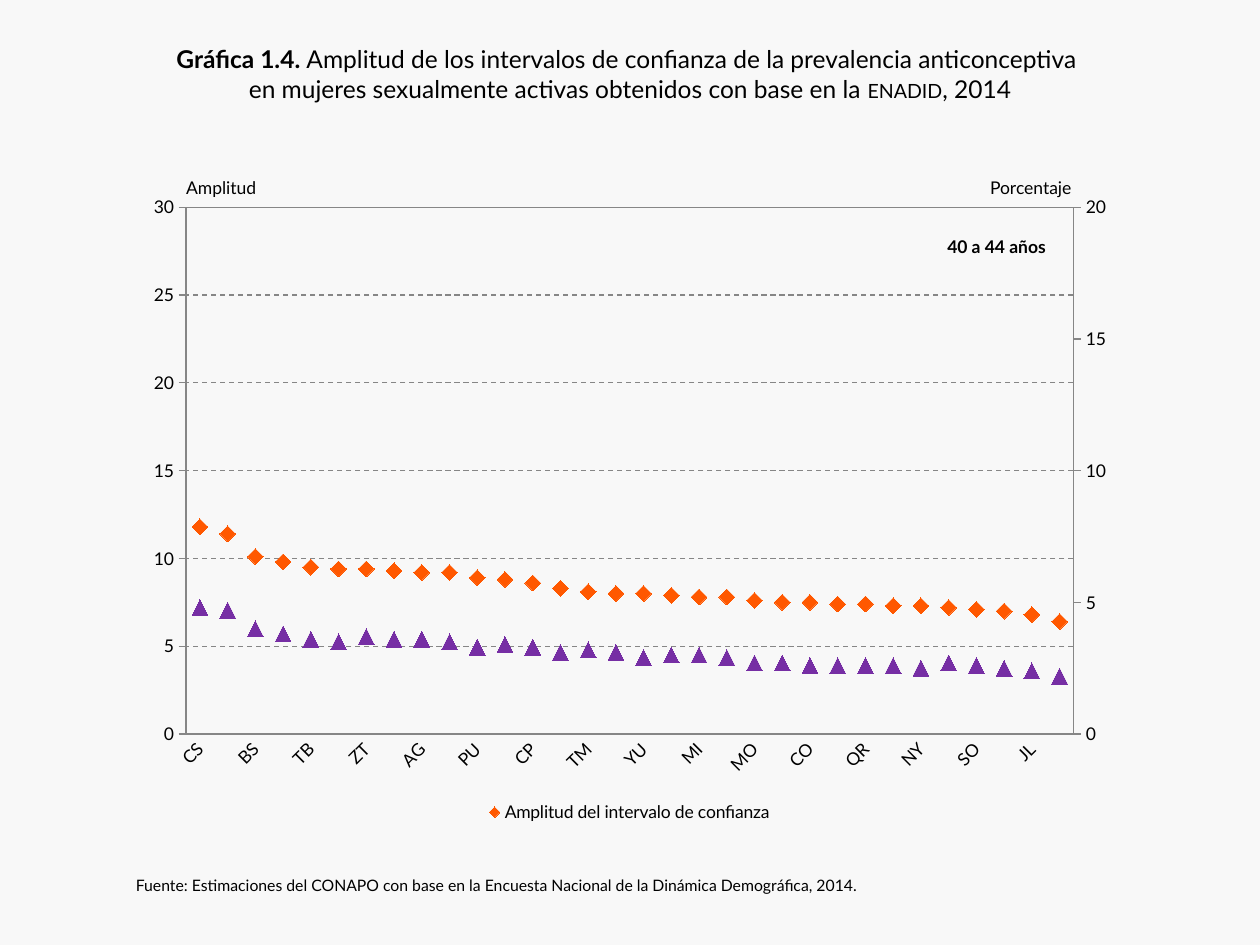
import copy
from dataclasses import dataclass

import pptx
import pptx.chart.axis
import pptx.chart.data
import pptx.dml.color
import pptx.enum.chart
import pptx.enum.dml
import pptx.enum.text
import pptx.oxml
import pptx.oxml.ns
import pptx.util

COLUMNS, ROWS = 100, 75
LINE_BREAK = "\n"


@dataclass(frozen=True)
class Theme:
    background: str = "F8F8F8"
    text: str = "000000"
    axis: str = "868686"
    amplitude: str = "FF5800"
    variation: str = "762EA4"
    font: str = "Lato"
    title_size: float = 14
    body_size: float = 10
    source_size: float = 9
    marker_size: int = 9
    line_width: float = 0.75


@dataclass(frozen=True)
class Box:
    """A place on the slide, in grid columns and rows."""
    left: float
    top: float
    width: float
    height: float


@dataclass(frozen=True)
class Run:
    text: str
    bold: bool = False
    small_caps: bool = False


@dataclass(frozen=True)
class Label:
    box: Box
    runs: tuple[Run, ...]
    size: float
    wrap: bool = False
    centered: bool = False


@dataclass(frozen=True)
class MarkerSeries:
    name: str
    values: tuple[float, ...]
    style: pptx.enum.chart.XL_MARKER_STYLE
    color: str


THEME = Theme()
STATES = ("CS OX BS VZ TB GR ZT QT AG HG PU SL CP CH TM CM "
          "YU DG MI GT MO MX CO TX QR BC NY NL SO CL JL SI").split()
CHART_BOX = Box(10.6, 14.5, 78.7, 51.2)
PLOT_SHARES = {"x": 0.053, "y": 0.038, "w": 0.895, "h": 0.817}
SERIES = (
    MarkerSeries(
        "Amplitud del intervalo de confianza",
        (11.8, 11.4, 10.1, 9.8, 9.5, 9.4, 9.4, 9.3, 9.2, 9.2, 8.9, 8.8, 8.6, 8.3, 8.1, 8,
         8, 7.9, 7.8, 7.8, 7.6, 7.5, 7.5, 7.4, 7.4, 7.3, 7.3, 7.2, 7.1, 7, 6.8, 6.4),
        pptx.enum.chart.XL_MARKER_STYLE.DIAMOND, THEME.amplitude),
    MarkerSeries("Columna1", (), pptx.enum.chart.XL_MARKER_STYLE.NONE, THEME.variation),
    MarkerSeries(
        "Coeficiente de variación (%)",
        (4.8, 4.7, 4, 3.8, 3.6, 3.5, 3.7, 3.6, 3.6, 3.5, 3.3, 3.4, 3.3, 3.1, 3.2, 3.1,
         2.9, 3, 3, 2.9, 2.7, 2.7, 2.6, 2.6, 2.6, 2.6, 2.5, 2.7, 2.6, 2.5, 2.4, 2.2),
        pptx.enum.chart.XL_MARKER_STYLE.TRIANGLE, THEME.variation),
)
LABELS = (
    Label(Box(74.2, 18.25, 11.2, 2.7), (Run("40 a 44 años", bold=True),), THEME.body_size),
    Label(Box(13.8, 13.55, 8.4, 2.7), (Run("Amplitud"),), THEME.body_size),
    Label(Box(77.6, 13.55, 9.5, 2.7), (Run("Porcentaje"),), THEME.body_size),
    Label(Box(9.8, 69, 81.9, 2.5),
          (Run("Fuente: Estimaciones del CONAPO con base en la Encuesta Nacional "
               "de la Dinámica Demográfica, 2014."),), THEME.source_size, wrap=True),
    Label(Box(5.1, 3.04, 89.8, 5.7),
          (Run("Gráfica 1.4. ", bold=True),
           Run("Amplitud de los intervalos de confianza de la prevalencia anticonceptiva "),
           Run(LINE_BREAK),
           Run("en mujeres sexualmente activas obtenidos con base en la "),
           Run("enadid", small_caps=True), Run(", 2014")),
          THEME.title_size, wrap=True, centered=True),
)


def rgb(color: str) -> pptx.dml.color.RGBColor:
    return pptx.dml.color.RGBColor.from_string(color)


def place(presentation, box: Box) -> tuple[int, int, int, int]:
    column, row = presentation.slide_width / COLUMNS, presentation.slide_height / ROWS
    return (round(box.left * column), round(box.top * row),
            round(box.width * column), round(box.height * row))


def style_font(font, size: float, bold: bool = False) -> None:
    font.name, font.size, font.bold = THEME.font, pptx.util.Pt(size), bold
    font.color.rgb = rgb(THEME.text)


def style_line(line) -> None:
    line.color.rgb = rgb(THEME.axis)
    line.width = pptx.util.Pt(THEME.line_width)


def add_label(presentation, slide, label: Label) -> None:
    shape = slide.shapes.add_textbox(*place(presentation, label.box))
    frame = shape.text_frame
    frame.word_wrap = label.wrap
    frame.auto_size = pptx.enum.text.MSO_AUTO_SIZE.SHAPE_TO_FIT_TEXT
    paragraph = frame.paragraphs[0]
    if label.centered:
        paragraph.alignment = pptx.enum.text.PP_ALIGN.CENTER
    for item in label.runs:
        if item.text == LINE_BREAK:
            paragraph.add_line_break()
            continue
        run = paragraph.add_run()
        run.text = item.text
        style_font(run.font, label.size, item.bold)
        if item.small_caps:
            run.font._element.set("cap", "small")


def style_value_axis(axis, maximum: float, number_format: str) -> None:
    axis.minimum_scale, axis.maximum_scale, axis.major_unit = 0, maximum, 5
    axis.major_tick_mark = pptx.enum.chart.XL_TICK_MARK.OUTSIDE
    axis.tick_labels.number_format = number_format
    axis.tick_labels.number_format_is_linked = False
    style_line(axis.format.line)


def frame_plot(plot_area) -> None:
    """Fix the inner plot rectangle and outline it."""
    for layout in plot_area.findall(pptx.oxml.ns.qn("c:layout")):
        plot_area.remove(layout)
    sides = "".join(f'<c:{side}Mode val="edge"/>' for side in "xy")
    sides += "".join(f'<c:{side} val="{share}"/>' for side, share in PLOT_SHARES.items())
    plot_area.insert(0, pptx.oxml.parse_xml(
        f'<c:layout {pptx.oxml.ns.nsdecls("c")}><c:manualLayout>'
        f'<c:layoutTarget val="inner"/>{sides}</c:manualLayout></c:layout>'))
    plot_area.append(pptx.oxml.parse_xml(
        f'<c:spPr {pptx.oxml.ns.nsdecls("c", "a")}><a:noFill/><a:ln w="9525"><a:solidFill>'
        f'<a:srgbClr val="{THEME.axis}"/></a:solidFill></a:ln></c:spPr>'))


def drop_empty_legend_entries(legend) -> None:
    position = legend._element.find(pptx.oxml.ns.qn("c:legendPos"))
    for index, item in reversed(list(enumerate(SERIES))):
        if not item.values:
            position.addnext(pptx.oxml.parse_xml(
                f'<c:legendEntry {pptx.oxml.ns.nsdecls("c")}><c:idx val="{index}"/>'
                f'<c:delete val="1"/></c:legendEntry>'))


def move_last_series_to_right_axis(chart) -> None:
    qn = pptx.oxml.ns.qn
    left_plot = chart.plots[0]._element
    right_plot = copy.deepcopy(left_plot)
    left_plot.remove(left_plot.findall(qn("c:ser"))[-1])
    for series in right_plot.findall(qn("c:ser"))[:-1]:
        right_plot.remove(series)
    left_plot.addnext(right_plot)

    category = copy.deepcopy(chart.category_axis._element)
    value = copy.deepcopy(chart.value_axis._element)
    chart.value_axis._element.addnext(value)
    value.addnext(category)
    old_ids = [item.get("val") for item in right_plot.findall(qn("c:axId"))]
    new_ids = dict(zip(old_ids, ("5001", "5002")))
    for element in (right_plot, category, value):
        for item in element.iterchildren(qn("c:axId"), qn("c:crossAx")):
            item.set("val", new_ids[item.get("val")])
    value.find(qn("c:axPos")).set("val", "r")
    value.find(qn("c:crosses")).set("val", "max")
    pptx.chart.axis.CategoryAxis(category).visible = False
    right_axis = pptx.chart.axis.ValueAxis(value)
    right_axis.has_major_gridlines = False
    style_value_axis(right_axis, 20, "0")


def add_interval_chart(presentation, slide) -> None:
    data = pptx.chart.data.CategoryChartData()
    data.categories = STATES
    for item in SERIES:
        data.add_series(item.name, item.values)
    chart = slide.shapes.add_chart(pptx.enum.chart.XL_CHART_TYPE.LINE_MARKERS,
                                   *place(presentation, CHART_BOX), data).chart
    style_font(chart.font, THEME.body_size)
    chart.has_title = False
    chart.has_legend = True
    chart.legend.position = pptx.enum.chart.XL_LEGEND_POSITION.BOTTOM
    chart.legend.include_in_layout = False
    drop_empty_legend_entries(chart.legend)
    chart.plots[0].vary_by_categories = False
    for series, item in zip(chart.plots[0].series, SERIES):
        series.smooth = False
        series.format.line.fill.background()
        series.marker.style, series.marker.size = item.style, THEME.marker_size
        series.marker.format.fill.solid()
        series.marker.format.fill.fore_color.rgb = rgb(item.color)
        series.marker.format.line.fill.background()

    states = chart.category_axis
    states.major_tick_mark = pptx.enum.chart.XL_TICK_MARK.NONE
    style_line(states.format.line)
    style_font(states.tick_labels.font, THEME.body_size)
    states._element.txPr.bodyPr.set("rot", str(-45 * 60000))
    skip = pptx.oxml.parse_xml(f'<c:tickLblSkip {pptx.oxml.ns.nsdecls("c")} val="2"/>')
    states._element.find(pptx.oxml.ns.qn("c:noMultiLvlLbl")).addprevious(skip)

    style_value_axis(chart.value_axis, 30, "#,##0")
    chart.value_axis.has_major_gridlines = True
    gridline = chart.value_axis.major_gridlines.format.line
    style_line(gridline)
    gridline.dash_style = pptx.enum.dml.MSO_LINE.DASH
    move_last_series_to_right_axis(chart)
    frame_plot(chart.value_axis._element.getparent())


def main() -> None:
    presentation = pptx.Presentation()
    presentation.slide_width = pptx.util.Inches(10)
    presentation.slide_height = pptx.util.Inches(7.5)
    slide = presentation.slides.add_slide(presentation.slide_layouts[6])
    slide.background.fill.solid()
    slide.background.fill.fore_color.rgb = rgb(THEME.background)
    add_interval_chart(presentation, slide)
    for label in LABELS:
        add_label(presentation, slide, label)
    presentation.save("out.pptx")


if __name__ == "__main__":
    main()
